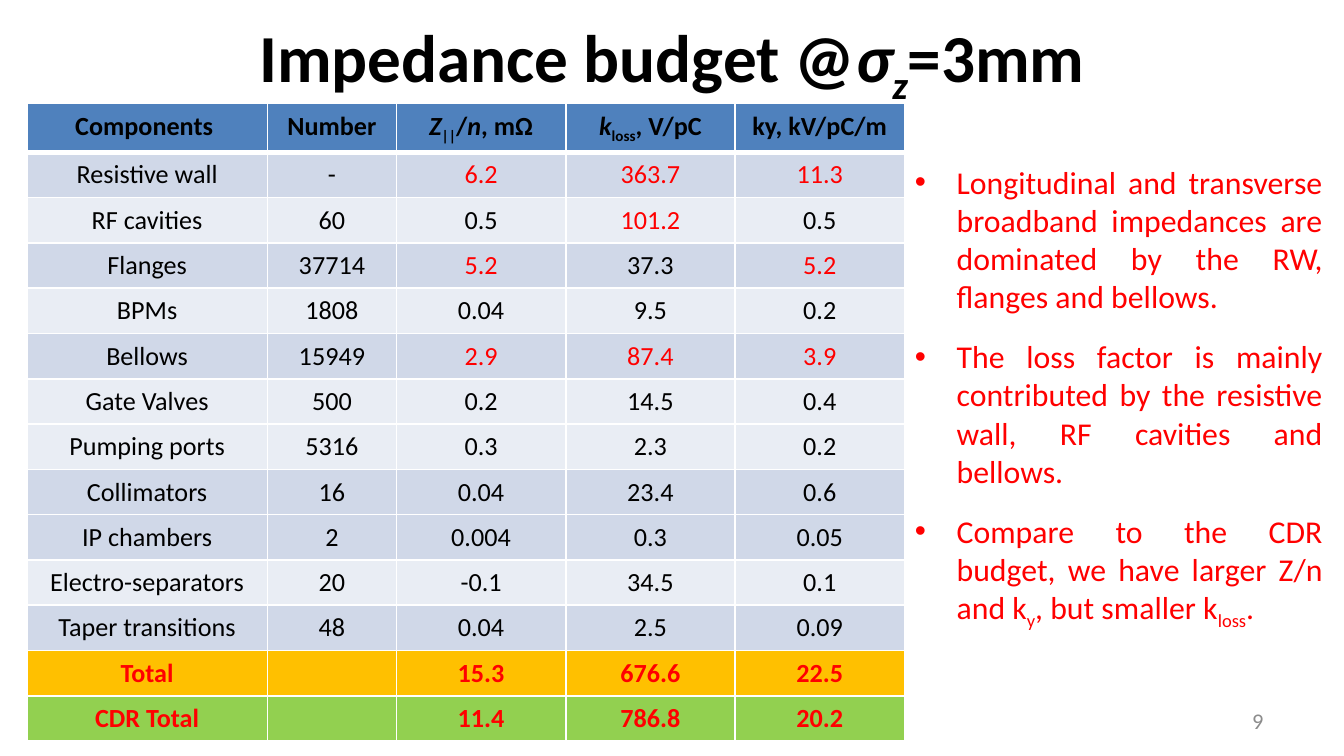
"""Build the impedance budget slide: a component table beside its conclusions."""
from typing import NamedTuple

from lxml import etree
from pptx import Presentation
from pptx.dml.color import RGBColor
from pptx.enum.text import MSO_ANCHOR, MSO_AUTO_SIZE, PP_ALIGN
from pptx.oxml.ns import qn
from pptx.util import Inches, Pt

CENTER, RIGHT, JUSTIFY = PP_ALIGN.CENTER, PP_ALIGN.RIGHT, PP_ALIGN.JUSTIFY
TOP, MIDDLE = MSO_ANCHOR.TOP, MSO_ANCHOR.MIDDLE
FIXED_SIZE = MSO_AUTO_SIZE.NONE

WIDTH = 10
HEIGHT = WIDTH * 9 / 16
FONT = "Calibri"
BLACK, WHITE, RED, GREY = "000000", "FFFFFF", "FF0000", "8C8C8C"
BLUE, DARK_BAND, LIGHT_BAND = "4F81BD", "D0D8E8", "E9EDF4"
ORANGE, GREEN = "FFC000", "92D050"
TABLE_LEFT, TABLE_TOP = 0.2, 0.77
COLUMN_WIDTHS = (1.79, 0.96, 1.26, 1.26, 1.26)
HEADER_HEIGHT, ROW_HEIGHT = 0.35, 0.33
BULLET_INDENT = 0.31


class Span(NamedTuple):
    """A piece of text with its own slant or subscript."""
    text: str
    italic: bool = False
    subscript: bool = False


class Style(NamedTuple):
    """The look shared by all spans of a paragraph."""
    size: float
    color: str
    align: int
    bold: bool = False


class BudgetRow(NamedTuple):
    """A table row, with the columns that are set in red."""
    values: tuple[str, ...]
    fill: str
    red_columns: tuple[int, ...] = ()
    bold: bool = False


TITLE = (Span("Impedance budget @"), Span("σ", italic=True),
         Span("z", italic=True, subscript=True), Span("=3mm"))
HEADER = (
    (Span("Components "),),
    (Span("Number"),),
    (Span("Z", italic=True), Span("||", subscript=True), Span("/"),
     Span("n", italic=True), Span(", mΩ")),
    (Span("k", italic=True), Span("loss", subscript=True), Span(", V/pC")),
    (Span("ky, kV/pC/m"),),
)
BUDGET = (
    BudgetRow(("Resistive wall", "-", "6.2", "363.7", "11.3"), DARK_BAND, (2, 3, 4)),
    BudgetRow(("RF cavities", "60", "0.5", "101.2", "0.5"), LIGHT_BAND, (3,)),
    BudgetRow(("Flanges", "37714", "5.2", "37.3", "5.2"), DARK_BAND, (2, 4)),
    BudgetRow(("BPMs", "1808", "0.04", "9.5", "0.2"), LIGHT_BAND),
    BudgetRow(("Bellows", "15949", "2.9", "87.4", "3.9"), DARK_BAND, (2, 3, 4)),
    BudgetRow(("Gate Valves", "500", "0.2", "14.5", "0.4"), LIGHT_BAND),
    BudgetRow(("Pumping ports", "5316", "0.3", "2.3", "0.2"), LIGHT_BAND),
    BudgetRow(("Collimators", "16", "0.04", "23.4", "0.6"), DARK_BAND),
    BudgetRow(("IP chambers", "2", "0.004", "0.3", "0.05"), DARK_BAND),
    BudgetRow(("Electro-separators", "20", "-0.1", "34.5", "0.1"), LIGHT_BAND),
    BudgetRow(("Taper transitions", "48", "0.04", "2.5", "0.09"), DARK_BAND),
    BudgetRow(("Total", "", "15.3", "676.6", "22.5"), ORANGE, tuple(range(5)), True),
    BudgetRow(("CDR Total", "", "11.4", "786.8", "20.2"), GREEN, tuple(range(5)), True),
)
CONCLUSIONS = (
    (Span("Longitudinal and transverse broadband impedances are dominated by "
          "the RW, flanges and bellows."),),
    (Span("The loss factor is mainly contributed by the resistive wall, "
          "RF cavities and bellows."),),
    (Span("Compare to the CDR budget, we have larger Z/n and k"),
     Span("y", subscript=True), Span(", but smaller k"),
     Span("loss", subscript=True), Span(".")),
)


def rgb(color: str) -> RGBColor:
    """Turn a hex string into a colour."""
    return RGBColor.from_string(color)


def write(paragraph, spans: tuple[Span, ...], style: Style) -> None:
    """Fill a paragraph with spans in one style."""
    paragraph.alignment = style.align
    paragraph.font.name = FONT
    paragraph.font.size = Pt(style.size)
    paragraph.font.bold = style.bold
    for span in spans:
        run = paragraph.add_run()
        run.text = span.text
        run.font.color.rgb = rgb(style.color)
        if span.italic:
            run.font.italic = True
        if span.subscript:
            run.font._element.set("baseline", "-25000")


def add_bullet(paragraph) -> None:
    """Give a paragraph a round bullet with a hanging indent."""
    properties = paragraph._p.get_or_add_pPr()
    properties.set("marL", str(Inches(BULLET_INDENT)))
    properties.set("indent", str(-Inches(BULLET_INDENT)))
    typeface = etree.Element(qn("a:buFont"), typeface="Arial")
    bullet = etree.Element(qn("a:buChar"), char="•")
    for part in (typeface, bullet):
        properties.insert_element_before(part, "a:tabLst", "a:defRPr", "a:extLst")


def place(shape, left: float, top: float, width: float, height: float) -> None:
    """Put a shape at percentages of the slide's size."""
    shape.left, shape.width = Inches(left * WIDTH / 100), Inches(width * WIDTH / 100)
    shape.top, shape.height = Inches(top * HEIGHT / 100), Inches(height * HEIGHT / 100)


def add_text_frame(slide, left: float, top: float, width: float, height: float, anchor):
    """Add a wrapping text box and return its text frame."""
    box = slide.shapes.add_textbox(0, 0, 0, 0)
    place(box, left, top, width, height)
    box.text_frame.word_wrap = True
    box.text_frame.vertical_anchor = anchor
    return box.text_frame


def set_borders(cell, top: float, bottom: float) -> None:
    """Draw white cell borders, with the widths of the horizontal ones given."""
    properties = cell._tc.get_or_add_tcPr()
    widths = {"a:lnL": 1, "a:lnR": 1, "a:lnT": top, "a:lnB": bottom}
    for position, (side, width) in enumerate(widths.items()):
        line = etree.Element(qn(side), w=str(Pt(width)))
        fill = etree.SubElement(line, qn("a:solidFill"))
        etree.SubElement(fill, qn("a:srgbClr"), val=WHITE)
        properties.insert(position, line)


def fill_cell(cell, spans: tuple[Span, ...], style: Style, fill: str, anchor) -> None:
    """Fill and write one table cell."""
    cell.fill.solid()
    cell.fill.fore_color.rgb = rgb(fill)
    cell.vertical_anchor = anchor
    if not spans:
        cell.margin_top = cell.margin_bottom = 0
    write(cell.text_frame.paragraphs[0], spans, style)


def add_budget_table(slide) -> None:
    """Add the table of components and totals."""
    table_height = HEADER_HEIGHT + ROW_HEIGHT * len(BUDGET)
    table = slide.shapes.add_table(
        len(BUDGET) + 1, len(HEADER), Inches(TABLE_LEFT), Inches(TABLE_TOP),
        Inches(sum(COLUMN_WIDTHS)), Inches(table_height)).table
    table.first_row = table.horz_banding = False
    for column, width in zip(table.columns, COLUMN_WIDTHS):
        column.width = Inches(width)
    for index, row in enumerate(table.rows):
        row.height = Inches(ROW_HEIGHT if index else HEADER_HEIGHT)
    for column, label in enumerate(HEADER):
        cell = table.cell(0, column)
        fill_cell(cell, label, Style(14, BLACK, CENTER, True), BLUE, TOP)
        set_borders(cell, 1, 3)
    last_header = table.cell(0, len(HEADER) - 1)
    last_header.margin_left = last_header.margin_right = Inches(0.04)
    for index, entry in enumerate(BUDGET, 1):
        for column, value in enumerate(entry.values):
            cell = table.cell(index, column)
            color = RED if column in entry.red_columns else BLACK
            spans = (Span(value),) if value else ()
            fill_cell(cell, spans, Style(14, color, CENTER, entry.bold), entry.fill, MIDDLE)
            set_borders(cell, 3 if index == 1 else 1, 1)


def main() -> None:
    """Build and save the slide."""
    deck = Presentation()
    deck.slide_width, deck.slide_height = Inches(WIDTH), Inches(HEIGHT)
    slide = deck.slides.add_slide(deck.slide_layouts[5])

    heading = slide.shapes.title
    place(heading, 5, 1.1, 90, 14)
    heading.text_frame.auto_size = FIXED_SIZE
    heading.text_frame.vertical_anchor = MIDDLE
    write(heading.text_frame.paragraphs[0], TITLE, Style(36, BLACK, CENTER, True))

    add_budget_table(slide)

    conclusions = add_text_frame(slide, 67.1, 20.6, 32.3, 58.7, TOP)
    for index, spans in enumerate(CONCLUSIONS):
        paragraph = conclusions.add_paragraph() if index else conclusions.paragraphs[0]
        write(paragraph, spans, Style(17, RED, JUSTIFY))
        paragraph.space_before = Pt(12)
        add_bullet(paragraph)

    page_number = add_text_frame(slide, 71.7, 92.6, 23.3, 5.3, MIDDLE)
    write(page_number.paragraphs[0], (Span("9"),), Style(12, GREY, RIGHT))
    deck.save("out.pptx")


if __name__ == "__main__":
    main()
